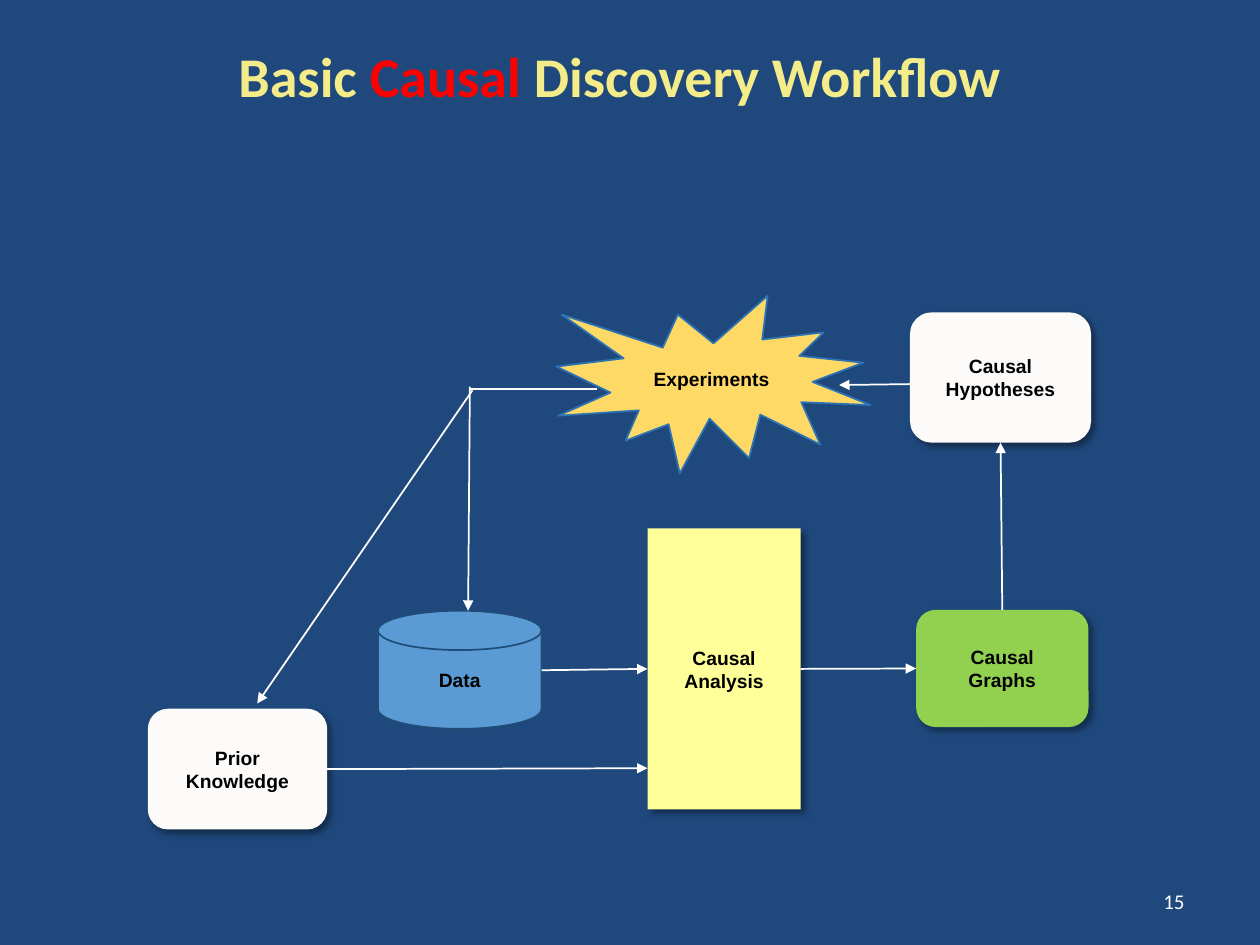
import pptx
import pptx.dml.color
import pptx.enum.shapes
import pptx.enum.text
import pptx.oxml
import pptx.oxml.ns
import pptx.util
from lxml import etree

Pt = pptx.util.Pt
RGBColor = pptx.dml.color.RGBColor
Shape = pptx.enum.shapes.MSO_SHAPE
Align = pptx.enum.text.PP_ALIGN
Anchor = pptx.enum.text.MSO_ANCHOR
qn = pptx.oxml.ns.qn

NAVY = RGBColor(0x1F, 0x49, 0x7D)
CREAM = RGBColor(0xF4, 0xEC, 0x88)
RED = RGBColor(0xFF, 0x00, 0x00)
BLACK = RGBColor(0x00, 0x00, 0x00)
WHITE = RGBColor(0xFF, 0xFF, 0xFF)
PAPER = RGBColor(0xFC, 0xFB, 0xF9)
GREEN = RGBColor(0x92, 0xD0, 0x50)
YELLOW = RGBColor(0xFF, 0xFF, 0x99)
GOLD = RGBColor(0xFF, 0xD9, 0x66)
BLUE = RGBColor(0x5B, 0x9B, 0xD5)
GOLD_EDGE = RGBColor(0x2E, 0x74, 0xB5)
BLUE_EDGE = RGBColor(0x1F, 0x4D, 0x78)

TOP, LEFT, BOTTOM, RIGHT = range(4)


def write_text(paragraph, text, *, size=11, font="Arial", color=BLACK, bold=True, align=Align.CENTER):
    paragraph.alignment = align
    run = paragraph.add_run()
    run.text = text
    run.font.size = Pt(size)
    run.font.name = font
    run.font.bold = bold
    run.font.color.rgb = color


def add_shadow(shape):
    effects = shape._element.spPr.find(qn("a:effectLst"))
    shadow = etree.SubElement(
        effects, qn("a:outerShdw"), blurRad=str(Pt(4)), dist=str(Pt(3)),
        dir="2700000", algn="tl", rotWithShape="0")
    color = etree.SubElement(shadow, qn("a:srgbClr"), val=str(BLACK))
    etree.SubElement(color, qn("a:alpha"), val="40000")


class WorkflowSlide:
    def __init__(self, presentation):
        self.slide = presentation.slides.add_slide(presentation.slide_layouts[5])
        self.slide.background.fill.solid()
        self.slide.background.fill.fore_color.rgb = NAVY
        self.line_width = Pt(1)
        self.padding = Pt(12)

    def title(self, parts, left, top, width, height):
        title = self.slide.shapes.title
        title.left, title.top, title.width, title.height = map(Pt, (left, top, width, height))
        frame = title.text_frame
        frame.auto_size = pptx.enum.text.MSO_AUTO_SIZE.NONE
        frame.vertical_anchor = Anchor.MIDDLE
        for text, color in parts:
            write_text(frame.paragraphs[0], text, size=32, font="Calibri", color=color)

    def node(self, kind, lines, left, top, width, height, fill, edge=None):
        shape = self.slide.shapes.add_shape(kind, Pt(left), Pt(top), Pt(width), Pt(height))
        shape.shadow.inherit = False
        shape.fill.solid()
        shape.fill.fore_color.rgb = fill
        if edge is None:
            shape.line.fill.background()
            add_shadow(shape)
        else:
            shape.line.color.rgb = edge
            shape.line.width = self.line_width
        frame = shape.text_frame
        frame.word_wrap = True
        frame.vertical_anchor = Anchor.MIDDLE
        frame.margin_left = frame.margin_right = self.padding
        for index, text in enumerate(lines):
            paragraph = frame.add_paragraph() if index else frame.paragraphs[0]
            write_text(paragraph, text)
        return shape

    def connector(self, start, end, begin=None, finish=None, arrow=True):
        connector = self.slide.shapes.add_connector(
            pptx.enum.shapes.MSO_CONNECTOR.STRAIGHT, *map(Pt, start + end))
        connector.line.color.rgb = WHITE
        connector.line.width = self.line_width
        if arrow:
            etree.SubElement(connector.line._get_or_add_ln(), qn("a:tailEnd"), type="triangle")
        etree.SubElement(connector._element.spPr, qn("a:effectLst"))
        if begin:
            connector.begin_connect(*begin)
        if finish:
            connector.end_connect(*finish)

    def page_number(self, text, left, top, width, height):
        box = self.slide.shapes.add_textbox(Pt(left), Pt(top), Pt(width), Pt(height))
        frame = box.text_frame
        frame.word_wrap = True
        frame.vertical_anchor = Anchor.MIDDLE
        write_text(frame.paragraphs[0], text, size=12, font="Calibri",
                   color=WHITE, bold=False, align=Align.RIGHT)


def main():
    presentation = pptx.Presentation()
    presentation.slide_width = Pt(720)
    presentation.slide_height = Pt(540)
    workflow = WorkflowSlide(presentation)
    workflow.title([("Basic ", CREAM), ("Causal", RED), (" Discovery Workflow", CREAM)],
                   0, 6, 708, 74)

    rounded = Shape.ROUNDED_RECTANGLE
    graphs = workflow.node(rounded, ["Causal Graphs"], 523.5, 348.5, 98.5, 67, GREEN)
    knowledge = workflow.node(rounded, ["Prior Knowledge"], 84.5, 405, 102.5, 69, PAPER)
    analysis = workflow.node(Shape.RECTANGLE, ["Causal", "Analysis"],
                             370, 302, 87.5, 160.5, YELLOW)
    hypotheses = workflow.node(rounded, ["Causal Hypotheses"], 520, 178.5, 103.5, 74.5, PAPER)
    workflow.node(Shape.EXPLOSION1, ["Experiments"], 318, 169, 179.5, 101.5, GOLD, GOLD_EDGE)
    workflow.node(Shape.FLOWCHART_MAGNETIC_DISK, ["Data"], 216, 349, 93.5, 67.5, BLUE, BLUE_EDGE)

    workflow.connector((573, 348.5), (572, 253), (graphs, TOP), (hypotheses, BOTTOM))
    workflow.connector((457.5, 382), (523.5, 382), (analysis, RIGHT), (graphs, LEFT))
    workflow.connector((309.5, 383), (370, 382), finish=(analysis, LEFT))
    workflow.connector((520, 219.5), (479.5, 220))
    workflow.connector((187, 440.5), (370, 439), begin=(knowledge, RIGHT))
    workflow.connector((268.5, 221), (267.5, 349))
    workflow.connector((341, 222.5), (268, 222.5), arrow=False)
    workflow.connector((270, 223), (147, 402))

    workflow.page_number("15", 516, 500.5, 168, 28.5)
    presentation.save("out.pptx")


if __name__ == "__main__":
    main()
